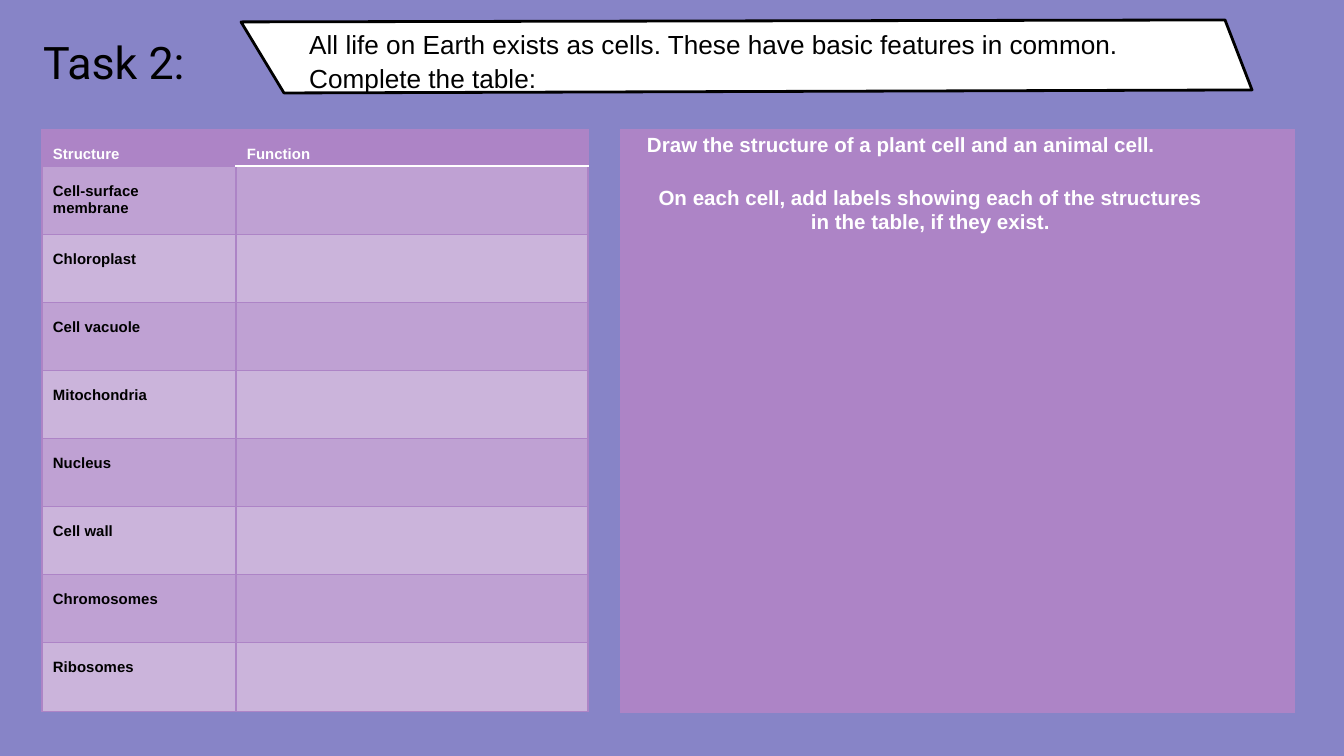
from dataclasses import dataclass

from pptx import Presentation
from pptx.dml.color import RGBColor as RGB
from pptx.enum.text import MSO_ANCHOR as Anchor, MSO_AUTO_SIZE as AutoSize, PP_ALIGN as Align
from pptx.oxml import parse_xml
from pptx.oxml.ns import nsdecls
from pptx.util import Pt

PX = 914400 / 134.4


@dataclass(frozen=True)
class Theme:
    background: str = "8784C7"
    purple: str = "AD84C6"
    dark_band: str = "BFA1D3"
    light_band: str = "CBB4DB"
    white: str = "FFFFFF"
    black: str = "000000"
    font: str = "Arial"
    title_font: str = "Roboto"
    title_size: int = 24
    intro_size: int = 14
    drawing_size: int = 11
    table_size: int = 8


T = Theme()
TITLE = "Task 2:"
INTRO = ("All life on Earth exists as cells. These have basic features in common. "
         "Complete the table:")
HEADERS = ["Structure", "Function"]
STRUCTURES = ["Cell-surface membrane", "Chloroplast", "Cell vacuole", "Mitochondria",
              "Nucleus", "Cell wall", "Chromosomes", "Ribosomes"]
DRAWING_TASKS = [
    ("Draw the structure of a plant cell and an animal cell.",
     {"alignment": Align.LEFT, "line_spacing": 1.07}),
    ("On each cell, add labels showing each of the structures in the table, if they exist.",
     {"alignment": Align.CENTER, "line_spacing": 1.07, "space_before": Pt(15.5)}),
]


def px(n):
    return round(n * PX)


def apply(obj, formats):
    for name, value in formats.items():
        setattr(obj, name, value)


def write(p, text, size, color, bold=False, font=T.font, **formats):
    r = p.add_run()
    r.text = text
    apply(r.font, {"name": font, "size": Pt(size), "bold": bold})
    r.font.color.rgb = RGB.from_string(color)
    apply(p, formats)


def fill(obj, color):
    obj.fill.solid()
    obj.fill.fore_color.rgb = RGB.from_string(color)


def add_title(slide):
    sp = slide.shapes.title
    apply(sp, {"left": px(30), "top": px(28), "width": px(228), "height": px(70)})
    tf = sp.text_frame
    apply(tf, {"margin_left": px(13), "margin_right": px(13), "margin_top": px(13),
               "margin_bottom": px(13), "vertical_anchor": Anchor.TOP,
               "auto_size": AutoSize.NONE})
    write(tf.paragraphs[0], TITLE, T.title_size, T.black, font=T.title_font,
          alignment=Align.LEFT, line_spacing=0.9)


def add_banner(slide):
    builder = slide.shapes.build_freeform(241, 22, scale=PX)
    builder.add_line_segments([(284, 93), (1252, 90), (1225, 20)], close=True)
    sp = builder.convert_to_shape()
    sp.shadow.inherit = False
    fill(sp, T.white)
    sp.line.color.rgb = RGB.from_string(T.black)
    sp.line.width = Pt(1.5)


def add_intro(slide):
    sp = slide.shapes.add_textbox(px(296), px(20), px(920), px(80))
    tf = sp.text_frame
    apply(tf, {"word_wrap": True, "vertical_anchor": Anchor.MIDDLE})
    write(tf.paragraphs[0], INTRO, T.intro_size, T.black, line_spacing=1.07)


def add_table(slide, left, top, widths, heights):
    frame = slide.shapes.add_table(len(heights), len(widths), px(left), px(top),
                                   px(sum(widths)), px(sum(heights)))
    table = frame.table
    apply(table, {"first_row": False, "horz_banding": False})
    for column, width in zip(table.columns, widths):
        column.width = px(width)
    for row, height in zip(table.rows, heights):
        row.height = px(height)
    return table


def set_borders(cell, **special):
    tc_pr = cell._tc.get_or_add_tcPr()
    for i, side in enumerate("LRTB"):
        color, width = special.get(side, (T.purple, 1 if side in "LR" else 0.5))
        tc_pr.insert(i, parse_xml(
            f'<a:ln{side} {nsdecls("a")} w="{Pt(width)}"><a:solidFill>'
            f'<a:srgbClr val="{color}"/></a:solidFill></a:ln{side}>'))


def add_structure_table(slide):
    table = add_table(slide, 42, 129, [194, 352], [37] + [68] * 7 + [70])
    rule = (T.white, 1)
    rows = [HEADERS] + [[name, ""] for name in STRUCTURES]
    for i, row in enumerate(rows):
        band = T.purple if i == 0 else T.dark_band if i % 2 else T.light_band
        for j, text in enumerate(row):
            cell = table.cell(i, j)
            fill(cell, band)
            special = {(0, 1): {"B": rule}, (1, 1): {"T": rule}}.get((i, j), {})
            set_borders(cell, **special)
            apply(cell, {"margin_left": px(11), "margin_right": px(40),
                         "margin_top": px(17), "margin_bottom": 0})
            if text:
                write(cell.text_frame.paragraphs[0], text, T.table_size,
                      T.black if i else T.white, bold=True)


def add_drawing_panel(slide):
    cell = add_table(slide, 621, 129, [673], [583]).cell(0, 0)
    fill(cell, T.purple)
    set_borders(cell)
    apply(cell, {"margin_left": px(26), "margin_right": px(80),
                 "margin_top": px(3), "margin_bottom": 0})
    tf = cell.text_frame
    for i, (text, formats) in enumerate(DRAWING_TASKS):
        p = tf.add_paragraph() if i else tf.paragraphs[0]
        write(p, text, T.drawing_size, T.white, bold=True, **formats)


def main():
    prs = Presentation()
    apply(prs, {"slide_width": px(1344), "slide_height": px(756)})
    slide = prs.slides.add_slide(prs.slide_layouts[5])
    fill(slide.background, T.background)
    add_title(slide)
    add_banner(slide)
    add_intro(slide)
    add_structure_table(slide)
    add_drawing_panel(slide)
    prs.save("out.pptx")


if __name__ == "__main__":
    main()
